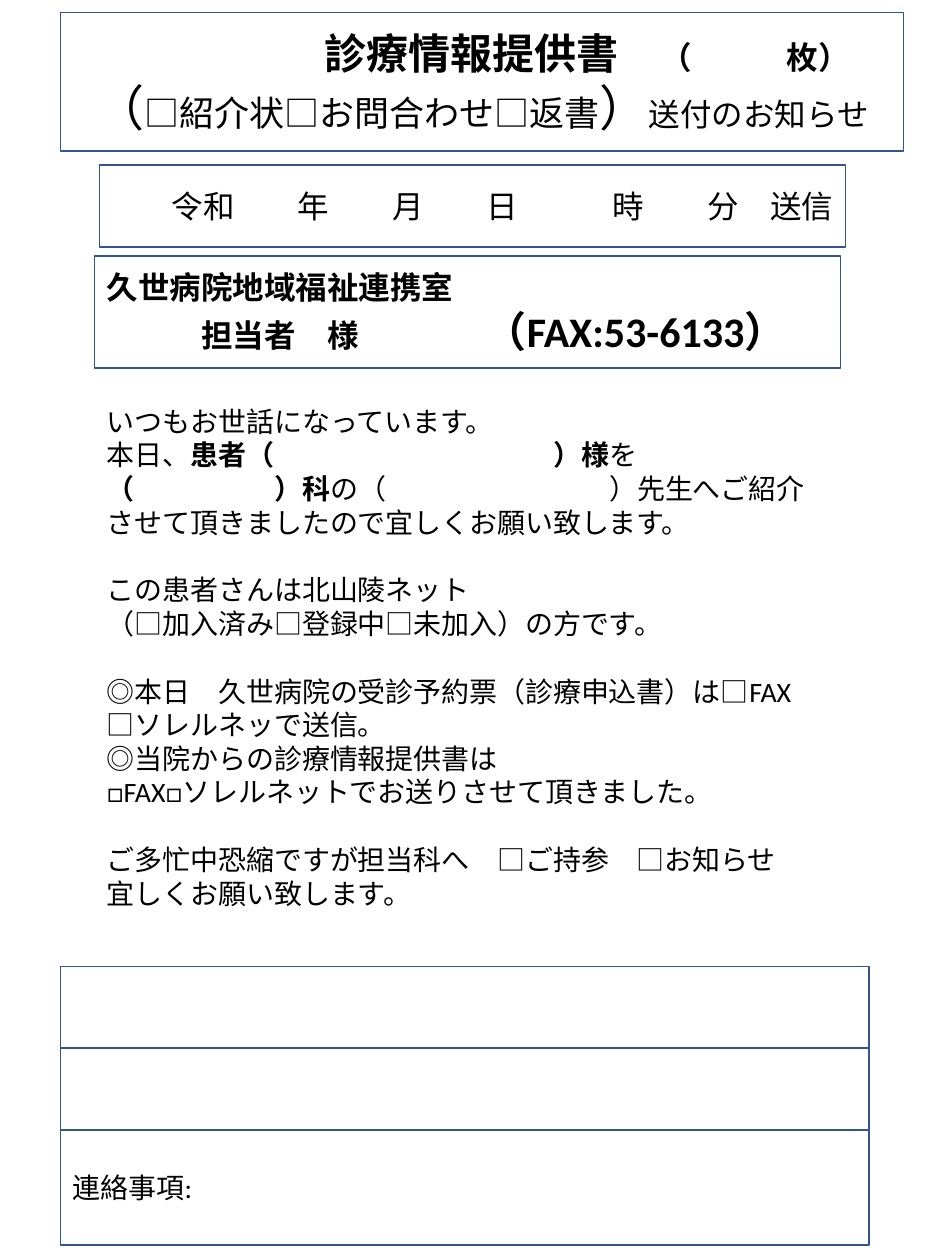
from pptx import Presentation, util as u
from pptx.dml.color import RGBColor
from pptx.enum import shapes, text
from pptx.oxml.xmlchemy import OxmlElement

COLORS = {"ink": "000000", "paper": "FFFFFF", "rule": "325491"}
FONT = "Calibri"
ALIGN = text.PP_ALIGN


def color(name):
    return RGBColor.from_string(COLORS[name])


def panel(slide, box, ruled=True):
    """Add a white box and return its text frame."""
    rect = slide.shapes.add_shape(shapes.MSO_SHAPE.RECTANGLE, *map(u.Inches, box))
    rect.shadow.inherit = False
    rect.fill.solid()
    rect.fill.fore_color.rgb = color("paper")
    if ruled:
        rect.line.color.rgb = color("rule")
        rect.line.width = u.Pt(1)
    else:
        rect.line.fill.background()
    frame = rect.text_frame
    frame.word_wrap = True
    frame.vertical_anchor = text.MSO_ANCHOR.MIDDLE
    return frame


def write(frame, runs, size, bold=False, align=ALIGN.LEFT, gap=0, indent=0, tabs=()):
    """Add a paragraph; each run is a string or (string, own font settings)."""
    first = frame.paragraphs[0]
    para = frame.add_paragraph() if first.runs else first
    props = para._p.get_or_add_pPr()
    if indent:
        props.set("marL", str(u.Inches(indent)))
        props.set("indent", "0")
    para.alignment = align
    if gap:
        para.space_before = u.Pt(gap)
    if tabs:
        stops = OxmlElement("a:tabLst")
        for pos in tabs:
            stop = OxmlElement("a:tab")
            stop.set("pos", str(u.Inches(pos)))
            stop.set("algn", "l")
            stops.append(stop)
        props.append(stops)
    font = para.font
    font.name, font.size, font.bold = FONT, u.Pt(size), bold
    font.color.rgb = color("ink")
    for item in runs:
        words, own = (item, {}) if isinstance(item, str) else item
        run = para.add_run()
        run.text = words
        if "size" in own:
            run.font.size = u.Pt(own["size"])
        if "bold" in own:
            run.font.bold = own["bold"]


def title(slide, box):
    frame = panel(slide, box)
    write(frame, ["診療情報提供書　", ("（　　　枚）", {"size": 18})],
          24, bold=True, align=ALIGN.CENTER, indent=1.67)
    write(frame, [("（", {"size": 28}), "□紹介状□お問合わせ□返書",
                  ("）", {"size": 28}), ("送付のお知らせ", {"size": 18})],
          20, align=ALIGN.CENTER)


def date(slide, box):
    write(panel(slide, box), ["令和　　年　　月　　日　　　時　　分　送信"],
          18, align=ALIGN.RIGHT)


def letter(slide, box):
    strong = {"bold": True}
    blocks = [
        [["いつもお世話になっています。"],
         ["本日、", ("患者（　　　　　　　　　　）様", strong), "を"],
         [("（　　　　　）科", strong),
          "の（　　　　　　　　）先生へご紹介させて頂きましたので宜しくお願い致します。"]],
        [["この患者さんは北山陵ネット"],
         ["（□加入済み□登録中□未加入）の方です。"]],
        [["◎本日　久世病院の受診予約票（診療申込書）は□FAX"],
         ["□ソレルネッで送信。"],
         ["◎当院からの診療情報提供書は"],
         ["□FAX□ソレルネットでお送りさせて頂きました。"]],
        [["ご多忙中恐縮ですが担当科へ　□ご持参　□お知らせ"],
         ["宜しくお願い致します。"]],
    ]
    frame = panel(slide, box, ruled=False)
    for b, block in enumerate(blocks):
        for n, runs in enumerate(block):
            write(frame, runs, 16, gap=19.5 if b and not n else 0)


def contact(slide, box):
    frame = panel(slide, box)
    write(frame, ["久世病院地域福祉連携室"], 18, bold=True)
    write(frame, ["\t担当者　様\t", ("（FAX:53-6133）", {"size": 24})],
          18, bold=True, tabs=(0.75, 3))


def notes(slide, box):
    """Stack two empty rows above the row for messages."""
    left, top, width, height = box
    row = 0.65
    for n in range(2):
        panel(slide, (left, top + n * row, width, row))
    last = panel(slide, (left, top + 2 * row, width, height - 2 * row))
    write(last, ["連絡事項:"], 16)


def main():
    deck = Presentation()
    deck.slide_width, deck.slide_height = u.Inches(7.5), u.Inches(10)
    slide = deck.slides.add_slide(deck.slide_layouts[6])
    title(slide, (0.48, 0.1, 6.69, 1.1))
    date(slide, (0.79, 1.31, 5.92, 0.65))
    letter(slide, (0.75, 2.81, 5.92, 4.81))
    notes(slide, (0.48, 7.67, 6.42, 2.21))
    contact(slide, (0.75, 2.03, 5.92, 0.89))
    deck.save("out.pptx")


if __name__ == "__main__":
    main()
